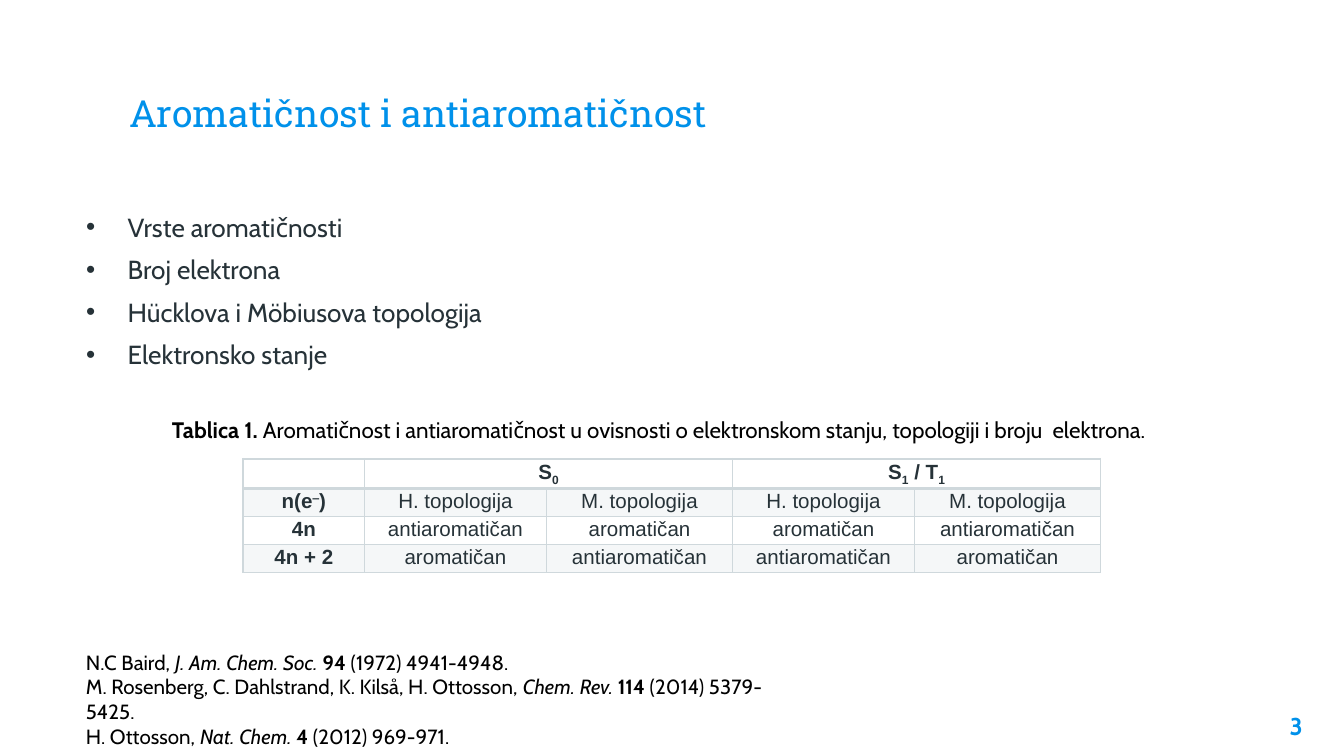
from lxml import etree
from pptx import Presentation, util as u
from pptx.dml.color import RGBColor
from pptx.enum import text
from pptx.oxml import ns

BLUE = RGBColor(0x00, 0x91, 0xEA)
SLATE = RGBColor(0x26, 0x32, 0x38)
BLACK = RGBColor(0x00, 0x00, 0x00)
MIST = RGBColor(0xCF, 0xD8, 0xDC)
WIDTH = u.Inches(10)
HEIGHT = WIDTH * 9 // 16

BOLD, ITALIC = {"bold": True}, {"italic": True}
SUB, SUPER = {"base": -25}, {"base": 30}

TOPICS = ["Vrste aromatičnosti", "Broj elektrona",
          "Hücklova i Möbiusova topologija", "Elektronsko stanje"]
CAPTION = [("Tablica 1. ", BOLD),
           "Aromatičnost i antiaromatičnost u ovisnosti o elektronskom stanju, "
           "topologiji i broju  elektrona."]
REFERENCES = [("N.C Baird, ", "J. Am. Chem. Soc. ", "94", " (1972) 4941-4948."),
              ("M. Rosenberg, C. Dahlstrand, K. Kilså, H. Ottosson, ",
               "Chem. Rev. ", "114", " (2014) 5379-5425."),
              ("H. Ottosson, ", "Nat. Chem. ", "4", " (2012) 969-971.")]
AROMATIC, ANTI = "aromatičan", "antiaromatičan"
HUCKEL, MOBIUS = "H. topologija", "M. topologija"
ROWS = [["", ["S", ("0", SUB)], "", ["S", ("1", SUB), " / T", ("1", SUB)], ""],
        [["n(e", ("‒", SUPER), ")"], HUCKEL, MOBIUS, HUCKEL, MOBIUS],
        ["4n", ANTI, AROMATIC, AROMATIC, ANTI],
        ["4n + 2", AROMATIC, ANTI, ANTI, AROMATIC]]
COLUMN_WEIGHTS = [0.9, 1.35, 1.38, 1.35, 1.38]


def share(left, top, width, height):
    """Turn percentages of the slide into a box."""
    return [int(part * whole / 100) for part, whole in
            zip((left, top, width, height), (WIDTH, HEIGHT, WIDTH, HEIGHT))]


def place(shape, box):
    shape.left, shape.top, shape.width, shape.height = box


def set_insets(holder, side, upright):
    holder.margin_left = holder.margin_right = u.Inches(side)
    holder.margin_top = holder.margin_bottom = u.Inches(upright)


def add_bullet(paragraph, indent):
    props = paragraph._p.get_or_add_pPr()
    props.set("marL", str(indent))
    props.set("indent", str(-indent))
    color = etree.SubElement(props, ns.qn("a:buClr"))
    etree.SubElement(color, ns.qn("a:srgbClr"), val=str(SLATE))
    etree.SubElement(props, ns.qn("a:buFont"), typeface="Arial")
    etree.SubElement(props, ns.qn("a:buChar"), char="•")


def write(frame, paragraphs, *, size, color, font="Cabin", bold=False,
          align=text.PP_ALIGN.LEFT, gap=0, line=1.0, bullet=None):
    """Fill a frame; a paragraph is a string or a list of runs."""
    for index, runs in enumerate(paragraphs):
        paragraph = frame.add_paragraph() if index else frame.paragraphs[0]
        paragraph.alignment = align
        paragraph.line_spacing = line
        paragraph.space_before = u.Pt(gap if index else 0)
        if bullet:
            add_bullet(paragraph, bullet)
        for part in [runs] if isinstance(runs, str) else runs:
            words, style = (part, {}) if isinstance(part, str) else part
            if not words:
                continue
            run = paragraph.add_run()
            run.text = words
            run.font.name, run.font.size = font, u.Pt(size)
            run.font.color.rgb = color
            run.font.bold = style.get("bold", bold)
            run.font.italic = style.get("italic", False)
            if "base" in style:
                run.font._element.set("baseline", str(style["base"] * 1000))
        if not runs:  # keeps an empty cell from growing its row
            ending = paragraph._p.get_or_add_endParaRPr()
            ending.set("sz", str(size * 100))
            etree.SubElement(ending, ns.qn("a:latin"), typeface=font)


def add_title(slide, box):
    title = slide.shapes.title
    place(title, box)
    frame = title.text_frame
    set_insets(frame, 0.1, 0.1)
    frame.auto_size = text.MSO_AUTO_SIZE.NONE
    frame.vertical_anchor = text.MSO_ANCHOR.BOTTOM
    write(frame, ["Aromatičnost i antiaromatičnost"], size=20, color=BLUE,
          font="Roboto Slab")


def add_topics(slide, box):
    topics = slide.placeholders[1]
    place(topics, box)
    frame = topics.text_frame
    set_insets(frame, 0.1, 0.1)
    frame.auto_size = text.MSO_AUTO_SIZE.NONE
    frame.vertical_anchor = text.MSO_ANCHOR.TOP
    write(frame, TOPICS, size=14, color=SLATE, gap=6, bullet=u.Inches(0.31))


def add_note(slide, box, paragraphs, insets=(0.1, 0.05), **style):
    frame = slide.shapes.add_textbox(*box).text_frame
    frame.word_wrap = True
    set_insets(frame, *insets)
    write(frame, paragraphs, **style)


def add_borders(cell, header):
    props = cell._tc.get_or_add_tcPr()
    widths = {"lnL": 1, "lnR": 1, "lnT": 1, "lnB": 2 if header else 1}
    for index, (side, points) in enumerate(widths.items()):
        border = etree.Element(ns.qn("a:" + side), w=str(u.Pt(points)))
        fill = etree.SubElement(border, ns.qn("a:solidFill"))
        etree.SubElement(fill, ns.qn("a:srgbClr"), val=str(MIST))
        props.insert(index, border)


def add_band(cell):
    cell.fill.solid()
    cell.fill.fore_color.rgb = MIST
    tint = cell._tc.tcPr.find(".//" + ns.qn("a:srgbClr"))
    etree.SubElement(tint, ns.qn("a:alpha"), val="20000")


def add_states_table(slide, box):
    table = slide.shapes.add_table(len(ROWS), len(COLUMN_WEIGHTS), *box).table
    table.first_row = table.horz_banding = False
    for column, weight in zip(table.columns, COLUMN_WEIGHTS):
        column.width = int(box[2] * weight / sum(COLUMN_WEIGHTS))
    for row in table.rows:
        row.height = box[3] // len(ROWS)
    for first in (1, 3):
        table.cell(0, first).merge(table.cell(0, first + 1))
    for r, contents in enumerate(ROWS):
        for c, content in enumerate(contents):
            cell = table.cell(r, c)
            set_insets(cell, 0.07, 0)
            if r % 2:
                add_band(cell)
            else:
                cell.fill.background()
            add_borders(cell, header=r == 0)
            write(cell.text_frame, [content], size=11, color=SLATE,
                  font="Arial", bold=r == 0 or c == 0,
                  align=text.PP_ALIGN.CENTER, line=1.07)


def main():
    deck = Presentation()
    deck.slide_width, deck.slide_height = WIDTH, HEIGHT
    slide = deck.slides.add_slide(deck.slide_layouts[1])

    # Heading and list
    add_title(slide, share(8.6, 6, 82.8, 13.6))
    add_topics(slide, share(5.4, 26.13, 34.8, 62.4))

    # Page number
    add_note(slide, share(91.9, 92.35, 6, 7.65), ["3"], insets=(0.1, 0.1),
             size=13, color=BLUE, bold=True, align=text.PP_ALIGN.RIGHT)

    # Table with its caption
    add_states_table(slide, share(18.1, 60.68, 63.8, 14.76))
    add_note(slide, share(11.8, 54.22, 76.3, 5.33), [CAPTION],
             size=12, color=BLACK)

    # References
    citations = [[authors, (journal, ITALIC), (volume, BOLD), pages]
                 for authors, journal, volume, pages in REFERENCES]
    add_note(slide, share(5.4, 85.05, 55.9, 14.95), citations,
             size=11, color=BLACK)

    deck.save("out.pptx")


if __name__ == "__main__":
    main()
